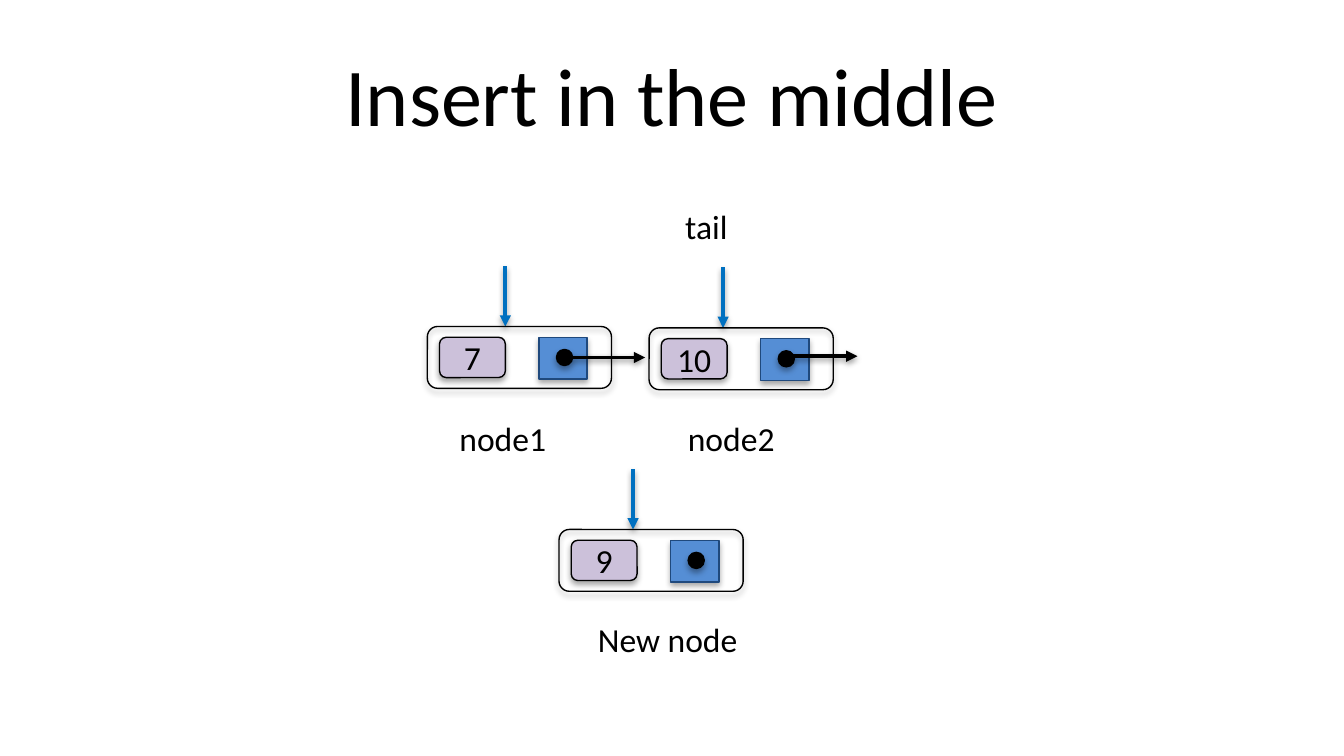
from lxml import etree
from pptx import Presentation
from pptx import util as u
from pptx.dml.color import RGBColor
from pptx.enum import shapes, text
from pptx.oxml.ns import qn

COLORS = {"ink": "000000", "value": "CCC1DA", "link": "558ED5",
          "link_edge": "1F497D", "pointer": "0070C0"}
SHAPE = shapes.MSO_SHAPE


def rgb(name):
    return RGBColor.from_string(COLORS[name])


def add_shadow(sp, dist, alpha):
    effects = etree.SubElement(sp._element.spPr, qn("a:effectLst"))
    shadow = etree.SubElement(effects, qn("a:outerShdw"), blurRad="40000",
                              dist=str(dist), dir="5400000", rotWithShape="0")
    color = etree.SubElement(shadow, qn("a:srgbClr"), val=COLORS["ink"])
    etree.SubElement(color, qn("a:alpha"), val=str(alpha * 1000))


def set_text(sp, words, size, align, anchor, wrap=False, inset=0.1):
    tf = sp.text_frame
    frame = {"word_wrap": wrap, "vertical_anchor": anchor,
             "margin_left": u.Inches(inset), "margin_right": u.Inches(inset)}
    for name, value in frame.items():
        setattr(tf, name, value)
    p = tf.paragraphs[0]
    p.alignment = align
    r = p.add_run()
    r.text = words
    for name, value in {"name": "Calibri", "size": u.Pt(size)}.items():
        setattr(r.font, name, value)
    r.font.color.rgb = rgb("ink")


def add_label(parent, words, box):
    sp = parent.add_textbox(*map(u.Inches, box))
    set_text(sp, words, 18, text.PP_ALIGN.LEFT, text.MSO_ANCHOR.TOP)
    sp.text_frame.auto_size = text.MSO_AUTO_SIZE.SHAPE_TO_FIT_TEXT


def add_box(parent, kind, box, fill=None, edge="ink"):
    sp = parent.add_shape(kind, *map(u.Inches, box))
    if fill:
        sp.fill.solid()
        sp.fill.fore_color.rgb = rgb(fill)
    else:
        sp.fill.background()
    sp.line.color.rgb = rgb(edge)
    sp.line.width = u.Pt(0.75)
    add_shadow(sp, 23000, 35)
    return sp


def add_arrow(parent, x, y, dx, dy, color):
    ends = map(u.Inches, (x, y, x + dx, y + dy))
    sp = parent.add_connector(shapes.MSO_CONNECTOR.STRAIGHT, *ends)
    sp.line.color.rgb = rgb(color)
    sp.line.width = u.Pt(2)
    etree.SubElement(sp.line._ln, qn("a:tailEnd"), type="triangle")
    add_shadow(sp, 20000, 38)


def add_title(s, words, box):
    sp = s.shapes.add_textbox(*map(u.Inches, box))
    set_text(sp, words, 44, text.PP_ALIGN.CENTER, text.MSO_ANCHOR.MIDDLE, wrap=True)


def add_node(s, box, value, label, label_box, pointer_x, link=None):
    x, y, w, h = box
    node = s.shapes.add_group_shape().shapes
    add_arrow(node, x + pointer_x, y - 0.45, 0, 0.45, "pointer")
    add_box(node, SHAPE.ROUNDED_RECTANGLE, box)
    sp = add_box(node, SHAPE.ROUNDED_RECTANGLE, (x + 0.09, y + 0.08, 0.49, 0.3), "value")
    set_text(sp, value, 18, text.PP_ALIGN.CENTER, text.MSO_ANCHOR.MIDDLE, inset=0.05)
    add_box(node, SHAPE.RECTANGLE, (x + 0.83, y + 0.08, 0.36, 0.31), "link", "link_edge")
    add_box(node, SHAPE.OVAL, (x + 0.96, y + 0.17, 0.12, 0.12), "ink")
    if link:
        add_arrow(node, x + link[0], y + link[1], 0.54, 0, "ink")
    dx, dy, label_w, label_h = label_box
    add_label(node, label, (x + dx, y + dy, label_w, label_h))


def main():
    prs = Presentation()
    prs.slide_width = u.Inches(10)
    prs.slide_height = prs.slide_width * 9 // 16
    s = prs.slides.add_slide(prs.slide_layouts[6])
    add_title(s, "Insert in the middle", (0.5, 0.23, 9, 0.94))
    add_node(s, (3.18, 2.43, 1.37, 0.46), "7", "node1",
             (0.14, 0.63, 0.86, 0.4), 0.58, (1.08, 0.23))
    add_node(s, (4.83, 2.44, 1.37, 0.46), "10", "node2",
             (0.19, 0.62, 0.86, 0.4), 0.55, (1.01, 0.21))
    add_node(s, (4.16, 3.94, 1.37, 0.46), "9", "New node",
             (0.19, 0.62, 1.25, 0.4), 0.55)
    add_label(s.shapes, "tail", (5, 1.48, 0.52, 0.4))
    prs.save("out.pptx")


if __name__ == "__main__":
    main()
